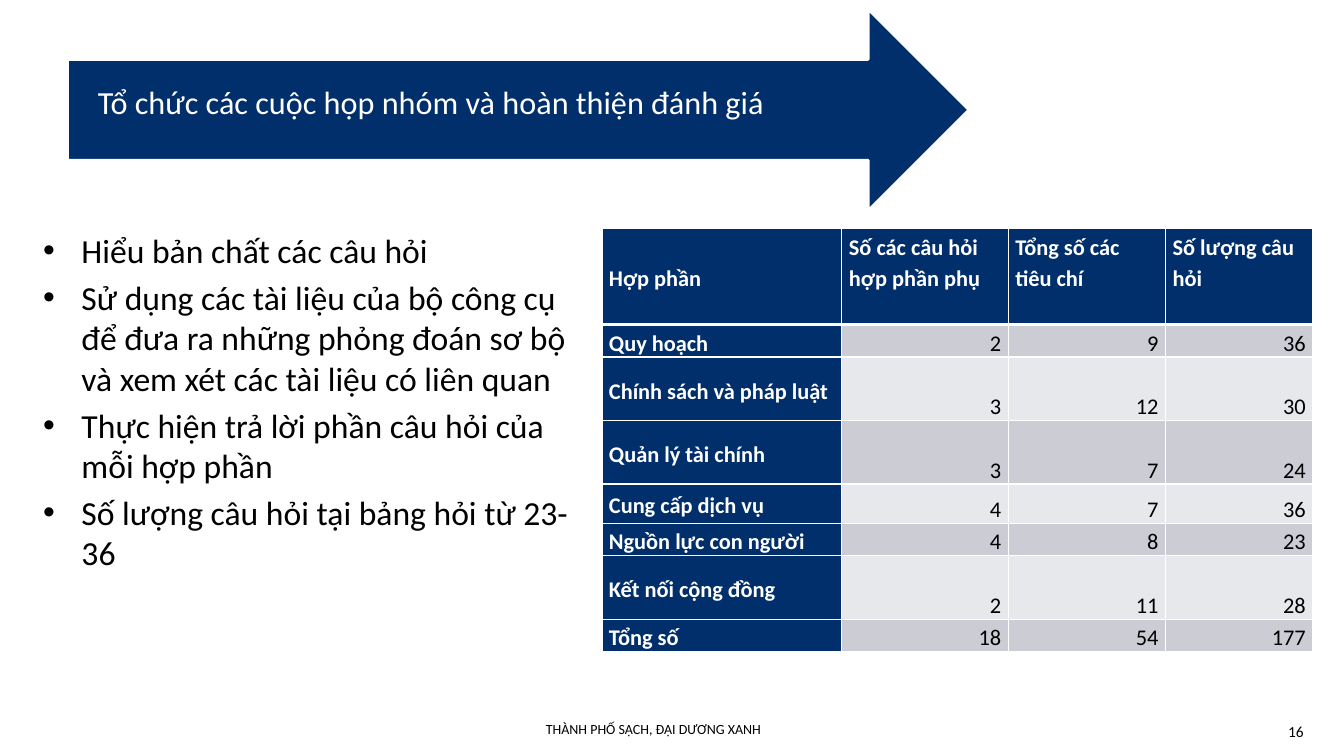
from lxml import etree
from pptx import Presentation
from pptx.dml.color import RGBColor
from pptx.enum.shapes import MSO_SHAPE
from pptx.enum.text import MSO_ANCHOR, MSO_AUTO_SIZE, PP_ALIGN
from pptx.oxml.ns import qn
from pptx.util import Inches, Pt

LEFT, CENTER, RIGHT = PP_ALIGN.LEFT, PP_ALIGN.CENTER, PP_ALIGN.RIGHT
TOP, MIDDLE, BOTTOM = MSO_ANCHOR.TOP, MSO_ANCHOR.MIDDLE, MSO_ANCHOR.BOTTOM
RIGHT_ARROW = MSO_SHAPE.RIGHT_ARROW
NO_AUTOFIT = MSO_AUTO_SIZE.NONE

# Content
TITLE = "Tổ chức các cuộc họp nhóm và hoàn thiện đánh giá"
BULLETS = [
    "Hiểu bản chất các câu hỏi",
    "Sử dụng các tài liệu của bộ công cụ để đưa ra những phỏng đoán sơ bộ "
    "và xem xét các tài liệu có liên quan",
    "Thực hiện trả lời phần câu hỏi của mỗi hợp phần",
    "Số lượng câu hỏi tại bảng hỏi từ 23-36",
]
ROWS = [
    ("Hợp phần", "Số các câu hỏi hợp phần phụ", "Tổng số các tiêu chí", "Số lượng câu hỏi"),
    ("Quy hoạch", 2, 9, 36),
    ("Chính sách và pháp luật", 3, 12, 30),
    ("Quản lý tài chính", 3, 7, 24),
    ("Cung cấp dịch vụ", 4, 7, 36),
    ("Nguồn lực con người", 4, 8, 23),
    ("Kết nối cộng đồng", 2, 11, 28),
    ("Tổng số", 18, 54, 177),
]
FOOTER = "THÀNH PHỐ SẠCH, ĐẠI DƯƠNG XANH"
PAGE = "16"

COL_WIDTHS = [2.38, 1.65, 1.56, 1.46]
ROW_HEIGHTS = [0.95, 0.31, 0.63, 0.63, 0.39, 0.31, 0.63, 0.31]
COLORS = {"navy": "002F6C", "white": "FFFFFF", "black": "000000",
          "band_dark": "CCCDD4", "band_light": "E7E8EB"}


def rgb(name):
    return RGBColor.from_string(COLORS[name])


def write(tf, *lines, size, color="black", bold=False, align=LEFT,
          spacing=None, before=0, after=0, bullet=False):
    tf.word_wrap = True
    for i, line in enumerate(lines):
        p = tf.paragraphs[0] if i == 0 else tf.add_paragraph()
        if bullet:
            pPr = p._p.get_or_add_pPr()
            pPr.set("marL", str(Inches(0.38)))
            pPr.set("indent", str(-Inches(0.38)))
            etree.SubElement(pPr, qn("a:buFont"), typeface="Arial")
            etree.SubElement(pPr, qn("a:buChar"), char="•")
        p.alignment = align
        p.line_spacing = spacing
        p.space_before = Pt(before if i else 0)
        p.space_after = Pt(after)
        r = p.add_run()
        r.text = line
        r.font.name = "Calibri"
        r.font.size = Pt(size)
        r.font.bold = bold
        r.font.color.rgb = rgb(color)


def add_text(slide, box, *lines, **fmt):
    sp = slide.shapes.add_textbox(*map(Inches, box))
    write(sp.text_frame, *lines, **fmt)


def set_borders(cell, **widths):
    tcPr = cell._tc.get_or_add_tcPr()
    for i, side in enumerate("LRTB"):
        ln = etree.Element(qn("a:ln" + side), w=str(Pt(widths.get(side, 1))))
        fill = etree.SubElement(ln, qn("a:solidFill"))
        etree.SubElement(fill, qn("a:srgbClr"), val=COLORS["white"])
        tcPr.insert(i, ln)


prs = Presentation()
prs.slide_width, prs.slide_height = Inches(13.33), Inches(7.5)
s = prs.slides.add_slide(prs.slide_layouts[5])

# Bullet list
add_text(s, (0.33, 2.23, 5.41, 5.08), *BULLETS, size=24, before=4.8, bullet=True)

# Arrow banner with the title in front
arrow = s.shapes.add_shape(RIGHT_ARROW, *map(Inches, (0.67, 0.09, 8.94, 2)))
arrow.shadow.inherit = False
arrow.fill.solid()
arrow.fill.fore_color.rgb = rgb("navy")
arrow.line.color.rgb = rgb("white")
arrow.line.width = Pt(2)

title = s.shapes.title
title.left, title.top, title.width, title.height = map(Inches, (0.87, 0.59, 8.44, 1))
tf = title.text_frame
tf.auto_size = NO_AUTOFIT
tf.vertical_anchor = MIDDLE
tf.margin_left = tf.margin_top = Inches(0.1)
tf.margin_right, tf.margin_bottom = Inches(0.28), Inches(0.21)
write(tf, TITLE, size=23, color="white", spacing=0.9)
arrow._element.addnext(title._element)

# Table of components
table = s.shapes.add_table(len(ROWS), len(COL_WIDTHS),
                           *map(Inches, (5.97, 2.27, 7.06, 4.14))).table
for column, width in zip(table.columns, COL_WIDTHS):
    column.width = Inches(width)
for row, height in zip(table.rows, ROW_HEIGHTS):
    row.height = Inches(height)

for i, values in enumerate(ROWS):
    for j, value in enumerate(values):
        cell = table.cell(i, j)
        header = i == 0 or j == 0
        band = "band_dark" if i % 2 else "band_light"
        cell.fill.solid()
        cell.fill.fore_color.rgb = rgb("navy" if header else band)
        cell.margin_left = cell.margin_right = Inches(0.07)
        cell.margin_top, cell.margin_bottom = Inches(0.01), 0
        cell.vertical_anchor = MIDDLE if j == 0 else TOP if i == 0 else BOTTOM
        write(cell.text_frame, str(value), size=16, bold=header,
              color="white" if header else "black",
              align=LEFT if header else RIGHT, spacing=1.15, after=6)
        set_borders(cell, T=3 if i == 1 else 1, B=3 if i == 0 else 1)

# Page number and footer
add_text(s, (10.7, 7.11, 2.33, 0.29), PAGE, size=11, align=RIGHT)
add_text(s, (1.67, 7.1, 9.62, 0.28), FOOTER, size=10, align=CENTER)

prs.save("out.pptx")
